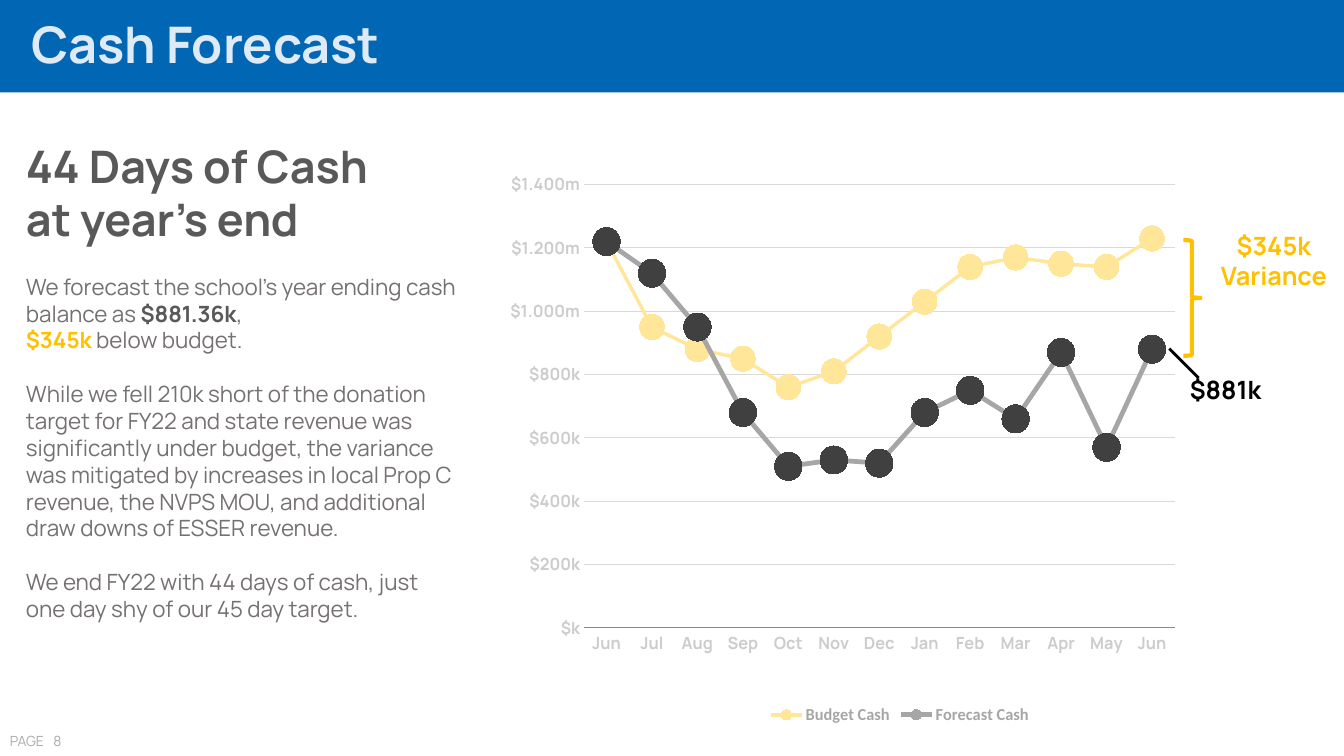
from dataclasses import dataclass

from lxml import etree
from pptx import Presentation
from pptx.chart.data import CategoryChartData
from pptx.dml.color import RGBColor
from pptx.enum import chart as charts, shapes, text
from pptx.oxml import ns
from pptx.util import Pt

BLUE = RGBColor(0x01, 0x66, 0xB3)
PALE_BLUE = RGBColor(0xDE, 0xEB, 0xF7)
GOLD = RGBColor(0xFF, 0xC0, 0x00)
PALE_GOLD = RGBColor(0xFF, 0xE6, 0x99)
CHARCOAL = RGBColor(0x40, 0x40, 0x40)
DARK_GREY = RGBColor(0x59, 0x59, 0x59)
BODY_GREY = RGBColor(0x76, 0x71, 0x71)
BASELINE_GREY = RGBColor(0x89, 0x89, 0x89)
PAGE_GREY = RGBColor(0xAF, 0xAB, 0xAB)
MID_GREY = RGBColor(0xA6, 0xA6, 0xA6)
AXIS_GREY = RGBColor(0xCC, 0xCC, 0xCC)
GRID_GREY = RGBColor(0xD9, 0xD9, 0xD9)
BLACK = RGBColor(0, 0, 0)

FONT = "Manrope"
PARAGRAPH_GAP = 19.2
MONTHS = "Jun Jul Aug Sep Oct Nov Dec Jan Feb Mar Apr May Jun".split()
VALUE_FORMAT = '[>999999]\\ "$"#.##0,,"m";"$"#,"k"'
EDGES = {"xMode": "edge", "yMode": "edge"}
PLOT_LAYOUT = {"layoutTarget": "inner", **EDGES, "x": 0.086, "y": 0.047, "w": 0.859, "h": 0.758}
LEGEND_LAYOUT = {**EDGES, "x": 0.35, "y": 0.93}


@dataclass(frozen=True)
class Span:
    words: str
    size: float = 16
    color: RGBColor = BODY_GREY
    bold: bool = False


@dataclass(frozen=True)
class Para:
    spans: tuple[Span, ...]
    gap: float = 0


@dataclass(frozen=True)
class Box:
    left: float
    top: float
    width: float
    height: float
    paras: tuple[Para, ...]
    centred: bool = False
    wrap: bool = True


@dataclass(frozen=True)
class CashLine:
    name: str
    thousands: tuple[int, ...]
    color: RGBColor
    point_color: RGBColor
    width: float
    marker_size: int


def one_line(words: str, size: float, color: RGBColor, bold: bool = True) -> tuple[Para, ...]:
    return (Para((Span(words, size, color, bold),)),)


BOXES = (
    Box(0, 519.8, 41, 19.4, one_line("PAGE", 10, PAGE_GREY, False), wrap=False),
    Box(31, 519.8, 31, 19.4, one_line("8", 10, PAGE_GREY, False)),
    Box(859.9, 161, 100, 51.1, one_line("$345k Variance", 18, GOLD), centred=True),
    Box(825.4, 263.5, 100, 28.8, one_line("$881k", 18, BLACK), centred=True),
    Box(11.5, 95.3, 321.8, 395.3, (
        *one_line("44 Days of Cash", 32, DARK_GREY),
        *one_line("at year’s end", 32, DARK_GREY),
        Para((
            Span("We forecast the school’s year ending cash balance as "),
            Span("$881.36k", color=DARK_GREY, bold=True),
            Span(","),
        ), PARAGRAPH_GAP),
        Para((Span("$345k", color=GOLD, bold=True), Span(" below budget."))),
        Para((Span(
            "While we fell 210k short of the donation target for FY22 and state revenue "
            "was significantly under budget, the variance was mitigated by increases in "
            "local Prop C revenue, the NVPS MOU, and additional draw downs of ESSER revenue."
        ),), PARAGRAPH_GAP),
        Para((Span(
            "We end FY22 with 44 days of cash, just one day shy of our 45 day target."
        ),), PARAGRAPH_GAP),
    )),
)

CASH_LINES = (
    CashLine("Forecast Cash",
             (1220, 1120, 950, 680, 510, 530, 520, 680, 750, 660, 870, 570, 880),
             MID_GREY, CHARCOAL, 3.5, 20),
    CashLine("Budget Cash",
             (1220, 950, 880, 850, 760, 810, 920, 1030, 1140, 1170, 1150, 1140, 1230),
             PALE_GOLD, PALE_GOLD, 2.5, 18),
)


def style_font(font, size: float, color: RGBColor, bold: bool, name: str = FONT) -> None:
    font.name = name
    font.size = Pt(size)
    font.bold = bold
    font.color.rgb = color


def add_box(page, box: Box) -> None:
    frame = page.shapes.add_textbox(
        Pt(box.left), Pt(box.top), Pt(box.width), Pt(box.height)).text_frame
    frame.word_wrap = box.wrap
    for index, para in enumerate(box.paras):
        paragraph = frame.add_paragraph() if index else frame.paragraphs[0]
        paragraph.space_before = Pt(para.gap)
        if box.centred:
            paragraph.alignment = text.PP_ALIGN.CENTER
        for span in para.spans:
            run = paragraph.add_run()
            run.text = span.words
            style_font(run.font, span.size, span.color, span.bold)


def add_header(page) -> None:
    title = page.shapes.title
    title.left, title.top, title.width, title.height = Pt(15.1), Pt(5.8), Pt(960), Pt(51.1)
    frame = title.text_frame
    frame.text = "Cash Forecast"
    frame.vertical_anchor = text.MSO_ANCHOR.TOP
    frame.auto_size = text.MSO_AUTO_SIZE.NONE
    paragraph = frame.paragraphs[0]
    paragraph.alignment = text.PP_ALIGN.LEFT
    style_font(paragraph.runs[0].font, 36, PALE_BLUE, True)
    bar = page.shapes.add_shape(shapes.MSO_SHAPE.RECTANGLE, 0, 0, Pt(960), Pt(66))
    bar.shadow.inherit = False
    bar.fill.solid()
    bar.fill.fore_color.rgb = BLUE
    bar.line.fill.background()
    title.element.addprevious(bar.element)


def set_layout(chart, tag: str, position: int, settings: dict) -> None:
    """Place a chart part by fractions of the chart; position is where its layout belongs."""
    part = chart.element.find(f".//{ns.qn(tag)}")
    layout = part.find(ns.qn("c:layout"))
    if layout is None:
        layout = etree.Element(ns.qn("c:layout"))
        part.insert(position, layout)
    manual = etree.SubElement(layout, ns.qn("c:manualLayout"))
    for name, value in settings.items():
        etree.SubElement(manual, ns.qn(f"c:{name}")).set("val", str(value))


def style_marker(marker, size: int, color: RGBColor) -> None:
    marker.style = charts.XL_MARKER_STYLE.CIRCLE
    marker.size = size
    marker.format.fill.solid()
    marker.format.fill.fore_color.rgb = color
    marker.format.line.fill.background()


def style_series(series, cash: CashLine) -> None:
    series.smooth = False
    points = [series.points[index] for index in range(len(MONTHS))]
    for part, color in ((series, cash.color), *((point, cash.point_color) for point in points)):
        style_marker(part.marker, cash.marker_size, color)
        part.format.line.color.rgb = color
        part.format.line.width = Pt(cash.width)


def add_cash_chart(page) -> None:
    data = CategoryChartData()
    data.categories = MONTHS
    for cash in CASH_LINES:
        data.add_series(cash.name, [value * 1000 for value in cash.thousands])
    chart = page.shapes.add_chart(
        charts.XL_CHART_TYPE.LINE_MARKERS, Pt(362.2), Pt(112.3), Pt(504), Pt(417.6), data).chart
    chart.has_title = False
    style_font(chart.font, 10, BLACK, False, "Calibri")
    chart.has_legend = True
    chart.legend.position = charts.XL_LEGEND_POSITION.BOTTOM
    chart.legend.include_in_layout = False
    style_font(chart.legend.font, 12, MID_GREY, True, "Calibri")
    for axis in (chart.category_axis, chart.value_axis):
        axis.major_tick_mark = axis.minor_tick_mark = charts.XL_TICK_MARK.NONE
        style_font(axis.tick_labels.font, 12, AXIS_GREY, True)
    chart.category_axis.format.line.color.rgb = BASELINE_GREY
    values = chart.value_axis
    values.minimum_scale, values.maximum_scale, values.major_unit = 0, 1_400_000, 200_000
    values.tick_labels.number_format = VALUE_FORMAT
    values.tick_labels.number_format_is_linked = False
    values.format.line.fill.background()
    values.major_gridlines.format.line.color.rgb = GRID_GREY
    values.major_gridlines.format.line.width = Pt(0.75)
    chart.plots[0].vary_by_categories = False
    for series, cash in zip(chart.plots[0].series, CASH_LINES):
        style_series(series, cash)
    # The budget line is drawn first, so the forecast lies on top
    forecast, budget = chart.element.findall(f".//{ns.qn('c:ser')}")
    forecast.addprevious(budget)
    set_layout(chart, "c:plotArea", 0, PLOT_LAYOUT)
    set_layout(chart, "c:legend", 1, LEGEND_LAYOUT)


def add_variance_marks(page) -> None:
    brace = page.shapes.add_shape(
        shapes.MSO_SHAPE.RIGHT_BRACE, Pt(845.3), Pt(171.4), Pt(12.2), Pt(82.8))
    brace.shadow.inherit = False
    brace.fill.background()
    brace.line.color.rgb = GOLD
    brace.line.width = Pt(3)
    pointer = page.shapes.add_connector(
        shapes.MSO_CONNECTOR.STRAIGHT, Pt(835.2), Pt(249.1), Pt(856.1), Pt(270))
    pointer.line.color.rgb = BLACK
    pointer.line.width = Pt(2)
    etree.SubElement(pointer.element.spPr, ns.qn("a:effectLst"))


def main() -> None:
    deck = Presentation()
    deck.slide_width, deck.slide_height = Pt(960), Pt(540)
    page = deck.slides.add_slide(deck.slide_layouts.get_by_name("Title Only"))
    add_header(page)
    add_cash_chart(page)
    add_variance_marks(page)
    for box in BOXES:
        add_box(page, box)
    deck.save("out.pptx")


if __name__ == "__main__":
    main()
